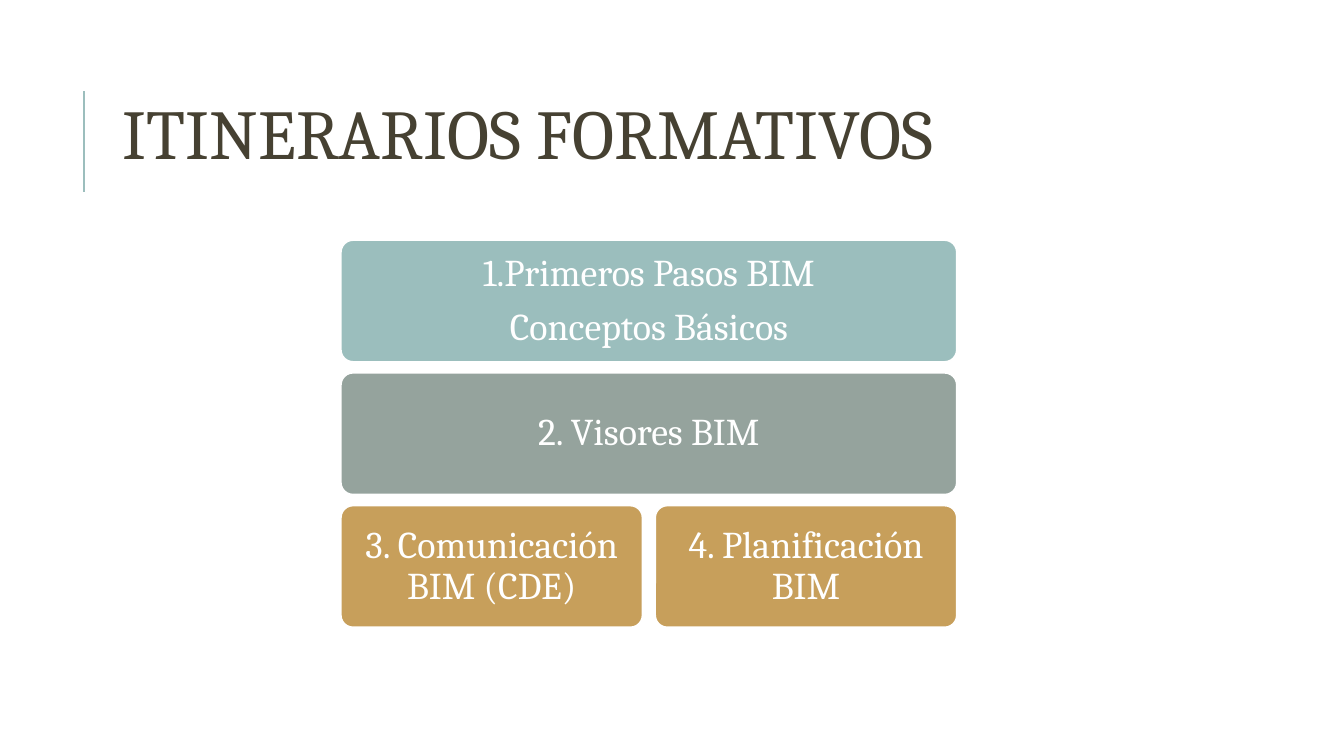
import pptx
import pptx.dml.color
import pptx.enum.shapes
import pptx.enum.text
import pptx.oxml.ns
import pptx.util
from lxml import etree

Pt = pptx.util.Pt
ALIGN = pptx.enum.text.PP_ALIGN
COLORS = {
    "title": "464132",
    "rule": "9CBEBD",
    "teal": "9BBEBD",
    "sage": "95A39D",
    "ochre": "C79F5B",
    "white": "FFFFFF",
}


class Deck:
    font = "Cambria"

    def __init__(self, slide):
        self.s = slide

    def color(self, name):
        return pptx.dml.color.RGBColor.from_string(COLORS[name])

    def set_text(self, sp, lines, size, color, align, spacing, inset, before=0):
        tf = sp.text_frame
        tf.word_wrap = True
        tf.vertical_anchor = pptx.enum.text.MSO_ANCHOR.MIDDLE
        tf.margin_left = tf.margin_right = Pt(inset[0])
        tf.margin_top = tf.margin_bottom = Pt(inset[1])
        for i, line in enumerate(lines):
            p = tf.add_paragraph() if i else tf.paragraphs[0]
            p.text = line
            p.alignment = align
            p.line_spacing = spacing
            p.space_before = Pt(before if i else 0)
            p.font.name = self.font
            p.font.size = Pt(size)
            p.font.color.rgb = self.color(color)

    def title(self, text, x, y, w, h):
        sp = self.s.shapes.add_textbox(Pt(x), Pt(y), Pt(w), Pt(h))
        self.set_text(sp, [text], 50, "title", ALIGN.LEFT, 0.8, (7.2, 3.6))

    def rule(self, x1, y1, x2, y2):
        line = self.s.shapes.add_connector(
            pptx.enum.shapes.MSO_CONNECTOR.STRAIGHT, Pt(x1), Pt(y1), Pt(x2), Pt(y2))
        line.line.color.rgb = self.color("rule")
        line.line.width = Pt(1.5)
        etree.SubElement(line._element.spPr, pptx.oxml.ns.qn("a:effectLst"))

    def block(self, lines, x, y, w, h, fill):
        sp = self.s.shapes.add_shape(
            pptx.enum.shapes.MSO_SHAPE.ROUNDED_RECTANGLE, Pt(x), Pt(y), Pt(w), Pt(h))
        sp.adjustments[0] = 0.1
        sp.shadow.inherit = False
        sp.fill.solid()
        sp.fill.fore_color.rgb = self.color(fill)
        sp.line.color.rgb = self.color("white")
        sp.line.width = Pt(1.25)
        self.set_text(sp, lines, 27, "white", ALIGN.CENTER, 0.9, (8, 8), before=9.4)


def main():
    prs = pptx.Presentation()
    prs.slide_width, prs.slide_height = Pt(960), Pt(540)
    deck = Deck(prs.slides.add_slide(prs.slide_layouts[6]))

    # Heading
    deck.rule(60, 137, 60, 65)
    deck.title("ITINERARIOS FORMATIVOS", 80.6, 40.3, 765.4, 118)

    # Training blocks: each row shares the full width equally
    left, top, width, height = 243.5, 171.5, 440, 87
    row_gap, col_gap = 7.8, 9
    rows = [
        ("teal", [["1.Primeros Pasos BIM", "Conceptos Básicos"]]),
        ("sage", [["2. Visores BIM"]]),
        ("ochre", [["3. Comunicación BIM (CDE)"], ["4. Planificación BIM"]]),
    ]
    for i, (fill, blocks) in enumerate(rows):
        w = (width - col_gap * (len(blocks) - 1)) / len(blocks)
        for j, lines in enumerate(blocks):
            deck.block(lines, left + j * (w + col_gap), top + i * (height + row_gap),
                       w, height, fill)

    prs.save("out.pptx")


if __name__ == "__main__":
    main()
